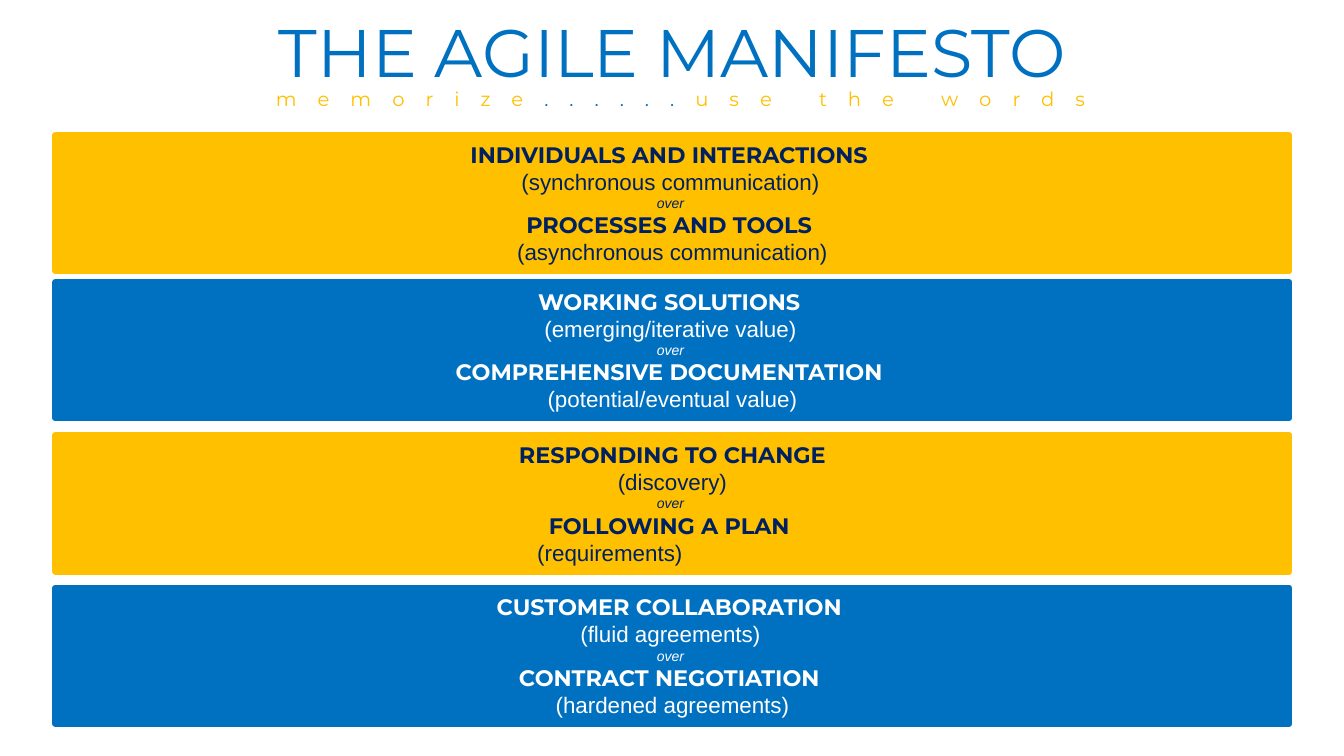
"""Build the Agile Manifesto slide: a title, a tagline and four value bands."""
from copy import deepcopy
from dataclasses import dataclass

from pptx import Presentation
from pptx.dml.color import RGBColor
from pptx.enum.shapes import MSO_SHAPE as Shape
from pptx.enum.text import MSO_ANCHOR as Anchor, PP_ALIGN as Align
from pptx.util import Cm, Pt


@dataclass(frozen=True)
class Theme:
    blue: str = "0070C0"
    gold: str = "FFC000"
    navy: str = "002060"
    white: str = "FFFFFF"
    heading_font: str = "Montserrat"
    body_font: str = "Arial"
    title_size: int = 48
    tagline_size: int = 14
    band_size: int = 16
    over_size: int = 10
    border: float = 4.5


theme = Theme()


def add_run(paragraph, text, font, size, color, bold=False, italic=False):
    run = paragraph.add_run()
    run.text = text
    run.font.name = font
    run.font.size = Pt(size)
    run.font.color.rgb = RGBColor.from_string(color)
    run.font.bold = bold
    run.font.italic = italic
    return run


def add_centred_paragraph(text_frame, first=False):
    paragraph = text_frame.paragraphs[0] if first else text_frame.add_paragraph()
    paragraph.alignment = Align.CENTER
    return paragraph


presentation = Presentation()
presentation.slide_width = Cm(33.87)
presentation.slide_height = Cm(19.05)
slide = presentation.slides.add_slide(presentation.slide_layouts[6])

title = slide.shapes.add_textbox(Cm(1.2), Cm(0.46), Cm(31.5), Cm(1.9)).text_frame
title.word_wrap = True
title.vertical_anchor = Anchor.MIDDLE
title.margin_left = title.margin_right = title.margin_top = title.margin_bottom = 0
paragraph = add_centred_paragraph(title, first=True)
paragraph.line_spacing = 0.9
add_run(paragraph, "THE AGILE MANIFESTO", theme.heading_font, theme.title_size, theme.blue)

tagline = slide.shapes.add_textbox(Cm(5.87), Cm(2.06), Cm(22.56), Cm(0.86)).text_frame
tagline.word_wrap = True
paragraph = add_centred_paragraph(tagline, first=True)
for text, color in (
    ("memorize", theme.gold),
    ("......", theme.blue),
    ("use the words", theme.gold),
):
    run = add_run(paragraph, text, theme.heading_font, theme.tagline_size, color)
    run.font._element.set("spc", "1500")

bands = (
    (3.4, theme.gold, theme.navy,
     "INDIVIDUALS AND INTERACTIONS ", "(synchronous communication)", " ",
     "PROCESSES AND TOOLS ", "(asynchronous communication)", 0),
    (7.11, theme.blue, theme.white,
     "WORKING SOLUTIONS ", "(emerging/iterative value)", " ",
     "COMPREHENSIVE DOCUMENTATION ", "(potential/eventual value)", 0),
    (10.97, theme.gold, theme.navy,
     "RESPONDING TO CHANGE", "(discovery)", "",
     "FOLLOWING A PLAN ", "(requirements)", 3.15),
    (14.81, theme.blue, theme.white,
     "CUSTOMER COLLABORATION ", "(fluid agreements)", " ",
     "CONTRACT NEGOTIATION ", "(hardened agreements)", 0),
)

for top, fill, ink, value, value_note, gap, other, other_note, indent in bands:
    band = slide.shapes.add_shape(Shape.RECTANGLE, Cm(1.4), Cm(top), Cm(31.09), Cm(3.43))
    band.shadow.inherit = False
    band.fill.solid()
    band.fill.fore_color.rgb = RGBColor.from_string(fill)
    band.line.color.rgb = RGBColor.from_string(fill)
    band.line.width = Pt(theme.border)
    text_frame = band.text_frame
    text_frame.word_wrap = True
    text_frame.vertical_anchor = Anchor.MIDDLE

    for heading, note, is_first in ((value, value_note, True), (other, other_note, False)):
        paragraph = add_centred_paragraph(text_frame, first=is_first)
        run = add_run(paragraph, heading, theme.heading_font, theme.band_size, ink, bold=True)
        if indent and not is_first:
            paragraph = add_centred_paragraph(text_frame)
            paragraph._p.get_or_add_pPr().set("marR", str(Cm(indent)))
        else:
            paragraph.add_line_break()
            paragraph._p[-1].insert(0, deepcopy(run.font._element))
        add_run(paragraph, note, theme.body_font, theme.band_size, ink)
        if is_first:
            if gap:
                add_run(paragraph, gap, theme.body_font, theme.over_size, ink)
            paragraph = add_centred_paragraph(text_frame)
            add_run(paragraph, "over ", theme.body_font, theme.over_size, ink, italic=True)

presentation.save("out.pptx")
